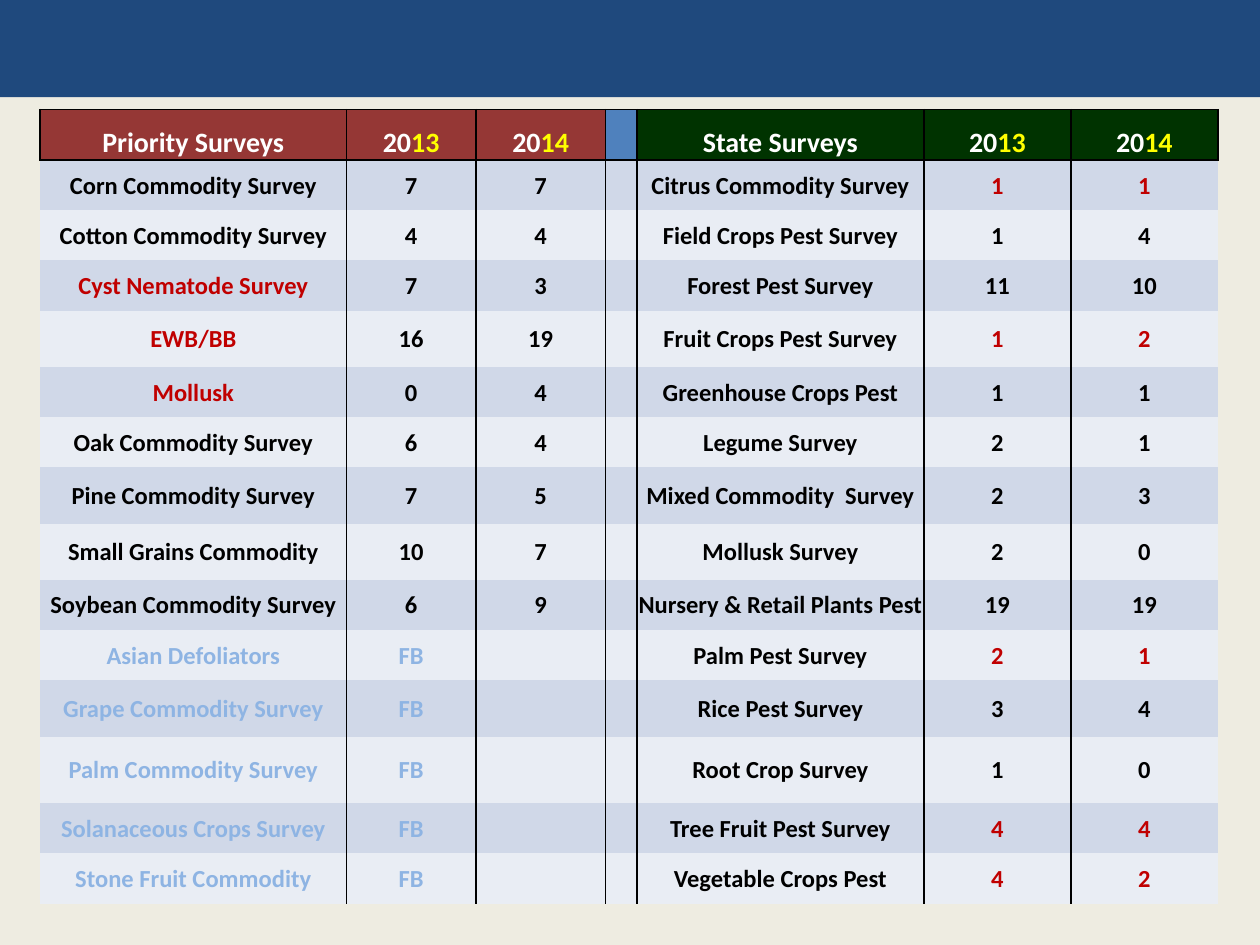
from pptx import Presentation
from pptx.dml.color import RGBColor
from pptx.enum.shapes import MSO_SHAPE
from pptx.enum.text import MSO_ANCHOR, PP_ALIGN
from pptx.oxml.ns import qn
from pptx.util import Pt
from lxml.etree import SubElement

COLORS = {
    "background": "EEECE1", "banner": "1F497D", "priority": "953735",
    "state": "003300", "gap": "4F81BD", "band_dark": "D0D8E8",
    "band_light": "E9EDF4", "white": "FFFFFF", "yellow": "FFFF00",
    "black": "000000", "red": "C00000", "pale_blue": "8EB4E3",
}
COLUMN_WIDTHS = [175, 74, 74, 18, 164, 84, 84]
ROW_HEIGHT = 28.75
TALL_ROWS = {4: 32.1, 7: 32.1, 8: 32.1, 11: 32.1, 12: 38}
GAP_COLUMN = 3

# Each survey: name, 2013, 2014, name colour, count colour
PRIORITY_SURVEYS = [
    ("Corn Commodity Survey", "7", "7", "black", "black"),
    ("Cotton Commodity Survey", "4", "4", "black", "black"),
    ("Cyst Nematode Survey", "7", "3", "red", "black"),
    ("EWB/BB", "16", "19", "red", "black"),
    ("Mollusk", "0", "4", "red", "black"),
    ("Oak Commodity Survey", "6", "4", "black", "black"),
    ("Pine Commodity Survey", "7", "5", "black", "black"),
    ("Small Grains Commodity", "10", "7", "black", "black"),
    ("Soybean Commodity Survey", "6", "9", "black", "black"),
    ("Asian Defoliators", "FB", "", "pale_blue", "pale_blue"),
    ("Grape Commodity Survey", "FB", "", "pale_blue", "pale_blue"),
    ("Palm Commodity Survey", "FB", "", "pale_blue", "pale_blue"),
    ("Solanaceous Crops Survey", "FB", "", "pale_blue", "pale_blue"),
    ("Stone Fruit Commodity", "FB", "", "pale_blue", "pale_blue"),
]
STATE_SURVEYS = [
    ("Citrus Commodity Survey", "1", "1", "black", "red"),
    ("Field Crops Pest Survey", "1", "4", "black", "black"),
    ("Forest Pest Survey", "11", "10", "black", "black"),
    ("Fruit Crops Pest Survey", "1", "2", "black", "red"),
    ("Greenhouse Crops Pest", "1", "1", "black", "black"),
    ("Legume Survey", "2", "1", "black", "black"),
    ("Mixed Commodity  Survey", "2", "3", "black", "black"),
    ("Mollusk Survey", "2", "0", "black", "black"),
    ("Nursery & Retail Plants Pest", "19", "19", "black", "black"),
    ("Palm Pest Survey", "2", "1", "black", "red"),
    ("Rice Pest Survey", "3", "4", "black", "black"),
    ("Root Crop Survey", "1", "0", "black", "black"),
    ("Tree Fruit Pest Survey", "4", "4", "black", "red"),
    ("Vegetable Crops Pest", "4", "2", "black", "red"),
]


def rgb(name):
    return RGBColor.from_string(COLORS[name])


def add_text(paragraph, text, size=14, color="black", bold=True):
    paragraph.alignment = PP_ALIGN.CENTER
    run = paragraph.add_run()
    run.text = text
    run.font.name = "Calibri"
    run.font.size = Pt(size)
    run.font.bold = bold
    run.font.color.rgb = rgb(color)


def set_borders(cell, visible):
    """Draw a black line on the visible sides (of "LRTB") and none on the rest."""
    properties = cell._tc.get_or_add_tcPr()
    for side in "LRTB":
        line = SubElement(properties, qn(f"a:ln{side}"), w=str(Pt(1)))
        if side in visible:
            fill = SubElement(line, qn("a:solidFill"))
            SubElement(fill, qn("a:srgbClr"), val=COLORS["black"])
        else:
            SubElement(line, qn("a:noFill"))


def style_cell(cell, fill, borders, anchor):
    set_borders(cell, borders)
    cell.fill.solid()
    cell.fill.fore_color.rgb = rgb(fill)
    cell.vertical_anchor = anchor
    cell.margin_left = cell.margin_right = cell.margin_top = Pt(0.7)
    cell.margin_bottom = 0


def style_grid(table):
    last_row, last_column = len(table.rows) - 1, len(table.columns) - 1
    for row in range(last_row + 1):
        for column in range(last_column + 1):
            cell = table.cell(row, column)
            if row == 0:
                fill = ("gap" if column == GAP_COLUMN else
                        "priority" if column < GAP_COLUMN else "state")
                style_cell(cell, fill, "LRTB", MSO_ANCHOR.BOTTOM)
                continue
            borders = "L" * (column > 0) + "R" * (column < last_column) + "T" * (row == 1)
            fill = "band_dark" if row % 2 else "band_light"
            style_cell(cell, fill, borders, MSO_ANCHOR.MIDDLE)


def fill_surveys(table, first_column, title, surveys):
    """Write one heading and its surveys into three columns."""
    def paragraph(row, offset):
        return table.cell(row, first_column + offset).text_frame.paragraphs[0]

    add_text(paragraph(0, 0), title, size=16, color="white")
    for offset, year in enumerate(("13", "14"), start=1):
        add_text(paragraph(0, offset), "20", size=16, color="white")
        add_text(paragraph(0, offset), year, size=16, color="yellow")
    for row, (name, *counts, name_color, count_color) in enumerate(surveys, start=1):
        add_text(paragraph(row, 0), name, color=name_color)
        for offset, count in enumerate(counts, start=1):
            if count:
                add_text(paragraph(row, offset), count, color=count_color)


def add_banner(slide, left, top, width, height):
    banner = slide.shapes.add_shape(
        MSO_SHAPE.RECTANGLE, Pt(left), Pt(top), Pt(width), Pt(height))
    banner.shadow.inherit = False
    banner.fill.solid()
    banner.fill.fore_color.rgb = rgb("banner")
    banner.line.fill.background()


def add_survey_table(slide, left, top):
    heights = [TALL_ROWS.get(row, ROW_HEIGHT) for row in range(len(STATE_SURVEYS) + 1)]
    table = slide.shapes.add_table(
        len(heights), len(COLUMN_WIDTHS), Pt(left), Pt(top),
        Pt(sum(COLUMN_WIDTHS)), Pt(sum(heights))).table
    for column, width in zip(table.columns, COLUMN_WIDTHS):
        column.width = Pt(width)
    for row, height in zip(table.rows, heights):
        row.height = Pt(height)
    style_grid(table)
    fill_surveys(table, 0, "Priority Surveys", PRIORITY_SURVEYS)
    fill_surveys(table, GAP_COLUMN + 1, "State Surveys", STATE_SURVEYS)


def main():
    presentation = Presentation()
    presentation.slide_width, presentation.slide_height = Pt(720), Pt(540)
    slide = presentation.slides.add_slide(presentation.slide_layouts[6])
    slide.background.fill.solid()
    slide.background.fill.fore_color.rgb = rgb("background")
    add_banner(slide, 0, 0, 720, 55.5)
    add_survey_table(slide, 23, 62.6)
    presentation.save("out.pptx")


if __name__ == "__main__":
    main()
